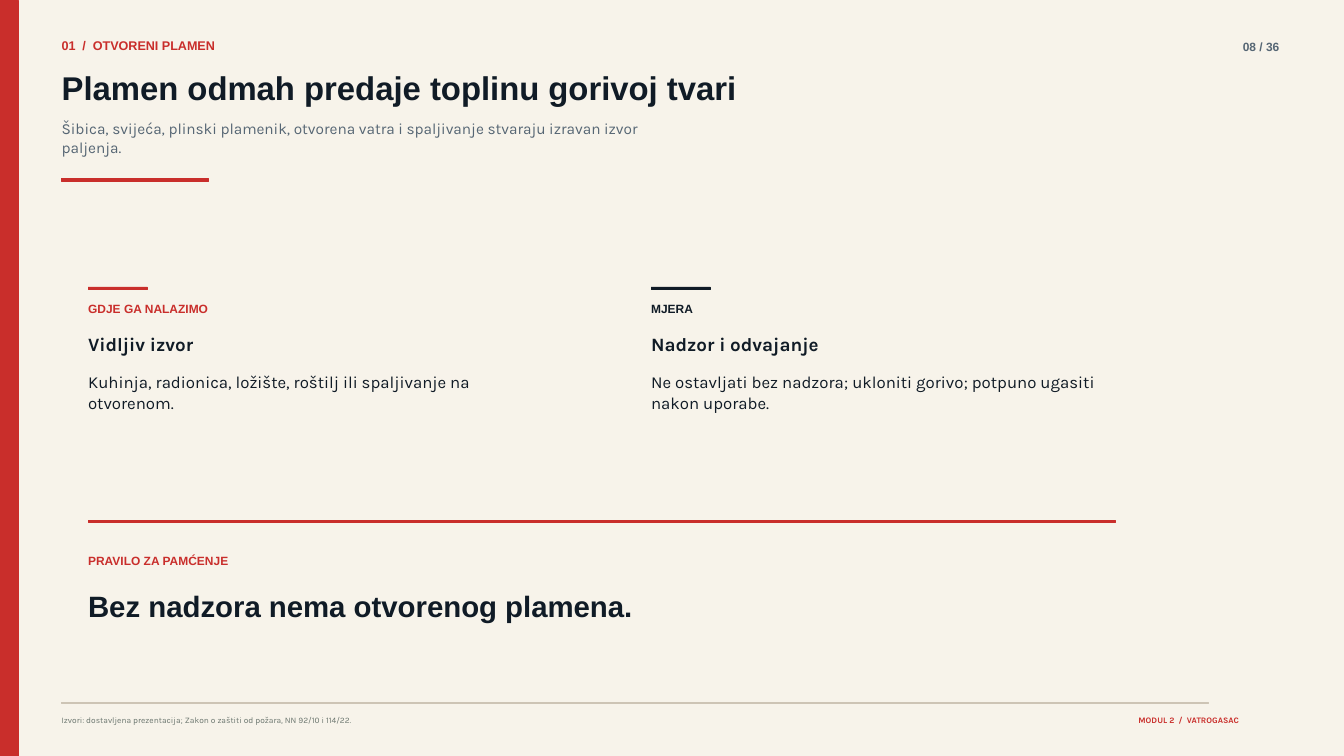
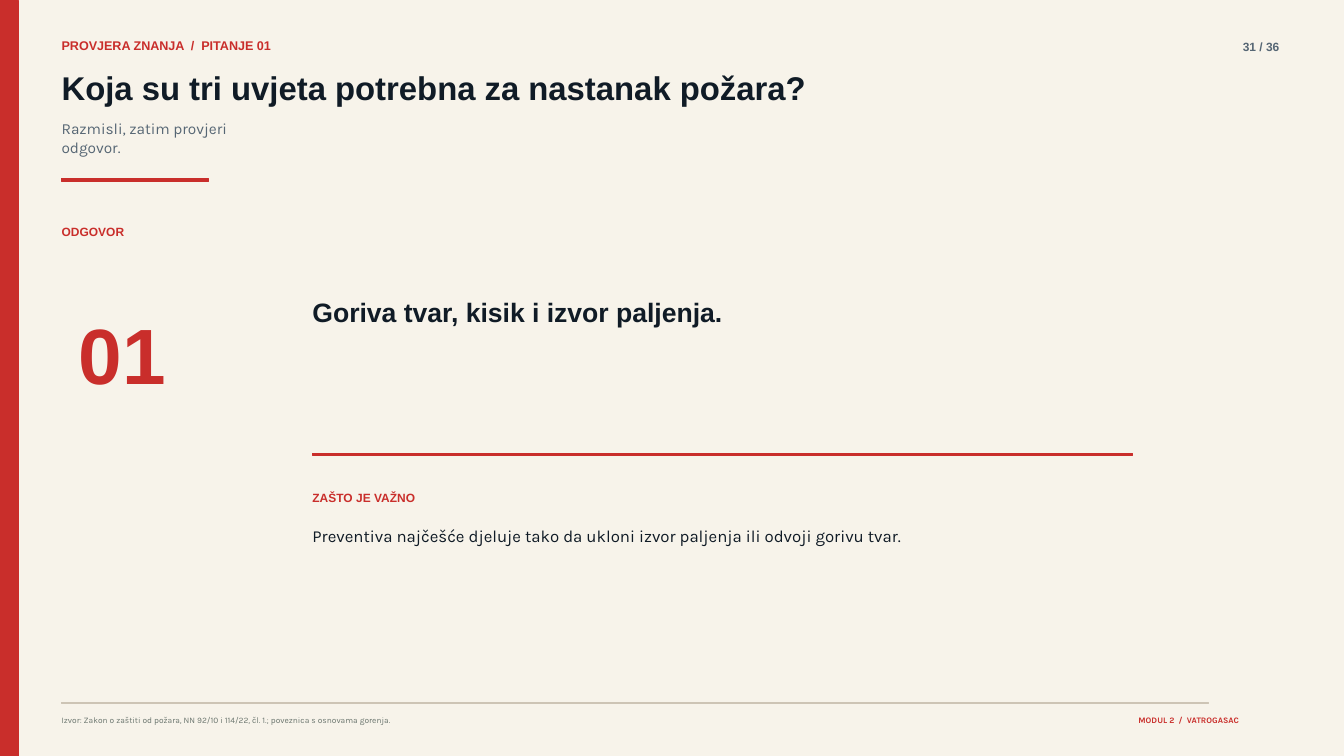
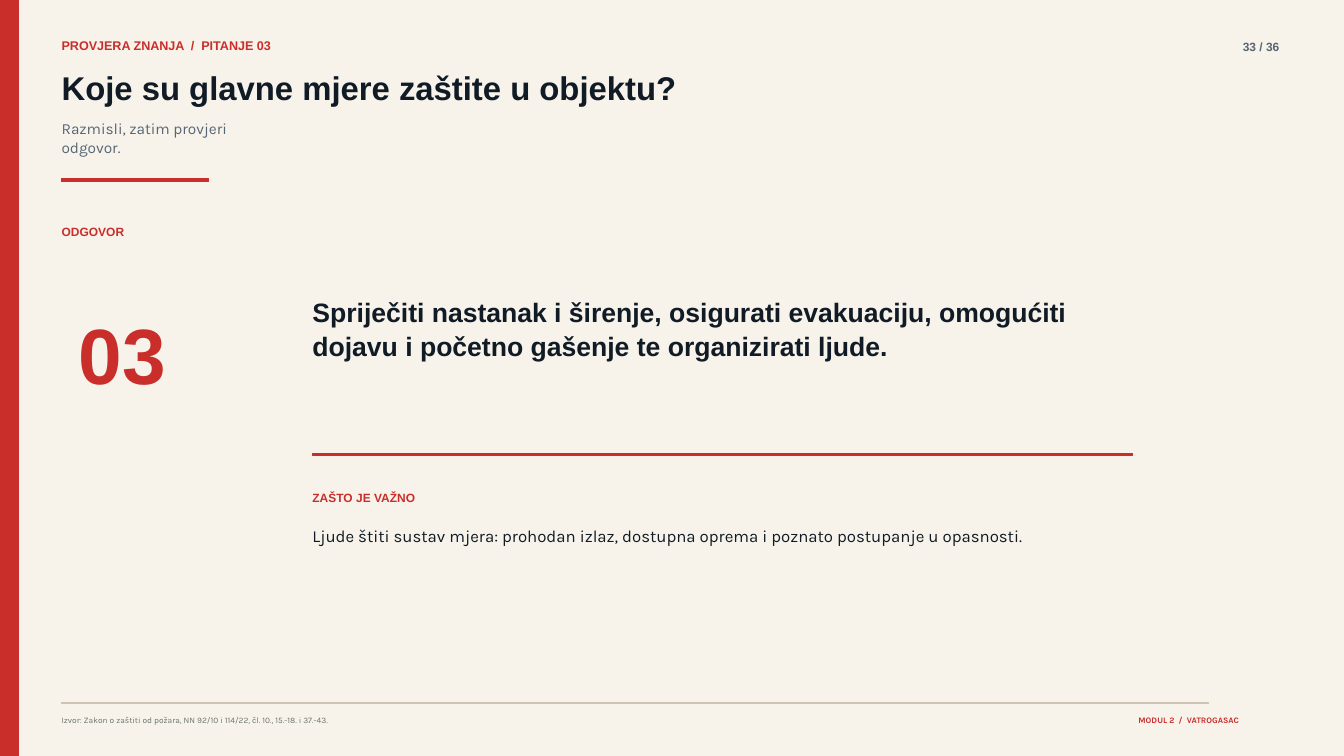
from pptx import Presentation
from pptx.dml.color import RGBColor
from pptx.enum.shapes import MSO_SHAPE
from pptx.enum.text import MSO_ANCHOR, MSO_AUTO_SIZE, PP_ALIGN
from pptx.util import Cm, Pt

RECT = MSO_SHAPE.RECTANGLE
TOP = MSO_ANCHOR.TOP
NO_FIT = MSO_AUTO_SIZE.NONE
LEFT, RIGHT = PP_ALIGN.LEFT, PP_ALIGN.RIGHT

COLORS = {
    "paper": "F7F3EA",
    "red": "C92E2B",
    "ink": "101B26",
    "slate": "566674",
    "sand": "CDC4B5",
    "moss": "6A756E",
}
# font, size, bold, line spacing
STYLES = {
    "title": ("Arial", 35.2, True, 1.05),
    "kicker": ("Arial", 13.5, True, 1.05),
    "label": ("Arial", 12.8, True, 1.05),
    "number": ("Arial", 84, True, 1.05),
    "rule": ("Arial", 31.5, True, 1.05),
    "answer": ("Arial", 28.5, True, 1.05),
    "subtitle": ("Karla", 16.5, False, 1.0),
    "heading": ("Karla", 20.2, True, 1.0),
    "body": ("Karla", 18, False, 1.0),
    "source": ("Karla", 9, False, 1.0),
    "module": ("Karla", 9, True, 1.0),
}
WIDTH, HEIGHT = 50.8, 28.58
MARGIN = 2.33
RULE_X = 3.33
ANSWER_X = 11.81


def add_text(s, box, text, style, color="ink", align=LEFT):
    """Place one paragraph in box (cm); the title style fills the placeholder."""
    font, size, bold, spacing = STYLES[style]
    sp = s.shapes.title if style == "title" else s.shapes.add_textbox(0, 0, 0, 0)
    sp.left, sp.top, sp.width, sp.height = [Cm(v) for v in box]
    tf = sp.text_frame
    tf.text = text
    tf.word_wrap = True
    tf.auto_size = NO_FIT
    tf.vertical_anchor = TOP
    tf.margin_left = tf.margin_right = tf.margin_top = tf.margin_bottom = 0
    p = tf.paragraphs[0]
    p.alignment = align
    p.line_spacing = spacing
    p.space_before = Pt(0)
    r = p.runs[0]
    r.font.name = font
    r.font.size = Pt(size)
    r.font.bold = bold
    r.font.color.rgb = RGBColor.from_string(COLORS[color])


def add_bar(s, box, color="red"):
    sp = s.shapes.add_shape(RECT, *[Cm(v) for v in box])
    rgb = RGBColor.from_string(COLORS[color])
    sp.shadow.inherit = False
    sp.fill.solid()
    sp.fill.fore_color.rgb = rgb
    sp.line.color.rgb = rgb
    sp.line.width = 0


slides = [
    {
        "kicker": "01  /  OTVORENI PLAMEN",
        "page": "08 / 36",
        "title": "Plamen odmah predaje toplinu gorivoj tvari",
        "subtitle": "Šibica, svijeća, plinski plamenik, otvorena vatra i spaljivanje "
                    "stvaraju izravan izvor paljenja.",
        "subtitle_width": 22.78,
        "source": "Izvori: dostavljena prezentacija; Zakon o zaštiti od požara, "
                  "NN 92/10 i 114/22.",
        "columns": [
            (3.33, 16.66, "red", "GDJE GA NALAZIMO", "Vidljiv izvor",
             "Kuhinja, radionica, ložište, roštilj ili spaljivanje na otvorenom."),
            (24.61, 18.14, "ink", "MJERA", "Nadzor i odvajanje",
             "Ne ostavljati bez nadzora; ukloniti gorivo; potpuno ugasiti nakon uporabe."),
        ],
        "rule": "Bez nadzora nema otvorenog plamena.",
    },
    {
        "kicker": "PROVJERA ZNANJA  /  PITANJE 01",
        "page": "31 / 36",
        "title": "Koja su tri uvjeta potrebna za nastanak požara?",
        "subtitle": "Razmisli, zatim provjeri odgovor.",
        "subtitle_width": 8.36,
        "source": "Izvor: Zakon o zaštiti od požara, NN 92/10 i 114/22, čl. 1.; "
                  "poveznica s osnovama gorenja.",
        "number": "01",
        "answer": "Goriva tvar, kisik i izvor paljenja.",
        "answer_height": 1.37,
        "reason": "Preventiva najčešće djeluje tako da ukloni izvor paljenja "
                  "ili odvoji gorivu tvar.",
    },
    {
        "kicker": "PROVJERA ZNANJA  /  PITANJE 03",
        "page": "33 / 36",
        "title": "Koje su glavne mjere zaštite u objektu?",
        "subtitle": "Razmisli, zatim provjeri odgovor.",
        "subtitle_width": 8.36,
        "source": "Izvor: Zakon o zaštiti od požara, NN 92/10 i 114/22, "
                  "čl. 10., 15.-18. i 37.-43.",
        "number": "03",
        "answer": "Spriječiti nastanak i širenje, osigurati evakuaciju, omogućiti "
                  "dojavu i početno gašenje te organizirati ljude.",
        "answer_height": 2.74,
        "reason": "Ljude štiti sustav mjera: prohodan izlaz, dostupna oprema "
                  "i poznato postupanje u opasnosti.",
    },
]

prs = Presentation()
prs.slide_width, prs.slide_height = Cm(WIDTH), Cm(HEIGHT)
background = prs.slide_master.background.fill
background.solid()
background.fore_color.rgb = RGBColor.from_string(COLORS["paper"])
title_only = prs.slide_layouts[5]

for content in slides:
    s = prs.slides.add_slide(title_only)

    # Shared frame: side band, header and footer
    add_bar(s, (0, 0, 0.68, HEIGHT))
    add_text(s, (MARGIN, 1.42, 30.43, 0.58), content["kicker"], "kicker", "red")
    add_text(s, (44.65, 1.45, 3.71, 0.53), content["page"], "label", "slate", RIGHT)
    add_text(s, (MARGIN, 2.49, 46.02, 1.57), content["title"], "title")
    add_text(s, (MARGIN, 4.52, content["subtitle_width"], 1.75),
             content["subtitle"], "subtitle", "slate")
    add_bar(s, (MARGIN, 6.76, 5.56, 0.1))
    add_bar(s, (MARGIN, 26.57, 43.33, 0.03), "sand")
    add_text(s, (MARGIN, 27.05, 37.31, 0.41), content["source"], "source", "moss")
    add_text(s, (39.95, 27.05, 6.88, 0.41), "MODUL 2  /  VATROGASAC", "module", "red", RIGHT)

    if "columns" in content:
        for x, width, color, label, heading, body in content["columns"]:
            add_bar(s, (x, 10.85, 2.24, 0.1), color)
            add_text(s, (x, 11.38, width, 0.56), label, "label", color)
            add_text(s, (x, 12.57, width, 1.04), heading, "heading")
            add_text(s, (x, 14.07, width, 1.98), body, "body")
        add_bar(s, (RULE_X, 19.69, 38.84, 0.06))
        add_text(s, (RULE_X, 20.9, 8.74, 0.56), "PRAVILO ZA PAMĆENJE", "label", "red")
        add_text(s, (RULE_X, 22.17, 33.32, 1.35), content["rule"], "rule")
    else:
        add_text(s, (MARGIN, 8.46, 5.56, 0.56), "ODGOVOR", "label", "red")
        add_text(s, (2.97, 11.38, 6.1, 3.58), content["number"], "number", "red")
        add_text(s, (ANSWER_X, 11.13, 31.22, content["answer_height"]),
                 content["answer"], "answer")
        add_bar(s, (ANSWER_X, 17.15, 31.01, 0.06))
        add_text(s, (ANSWER_X, 18.52, 9.53, 0.56), "ZAŠTO JE VAŽNO", "label", "red")
        add_text(s, (ANSWER_X, 19.89, 31.5, 1.02), content["reason"], "body")

prs.save("out.pptx")
